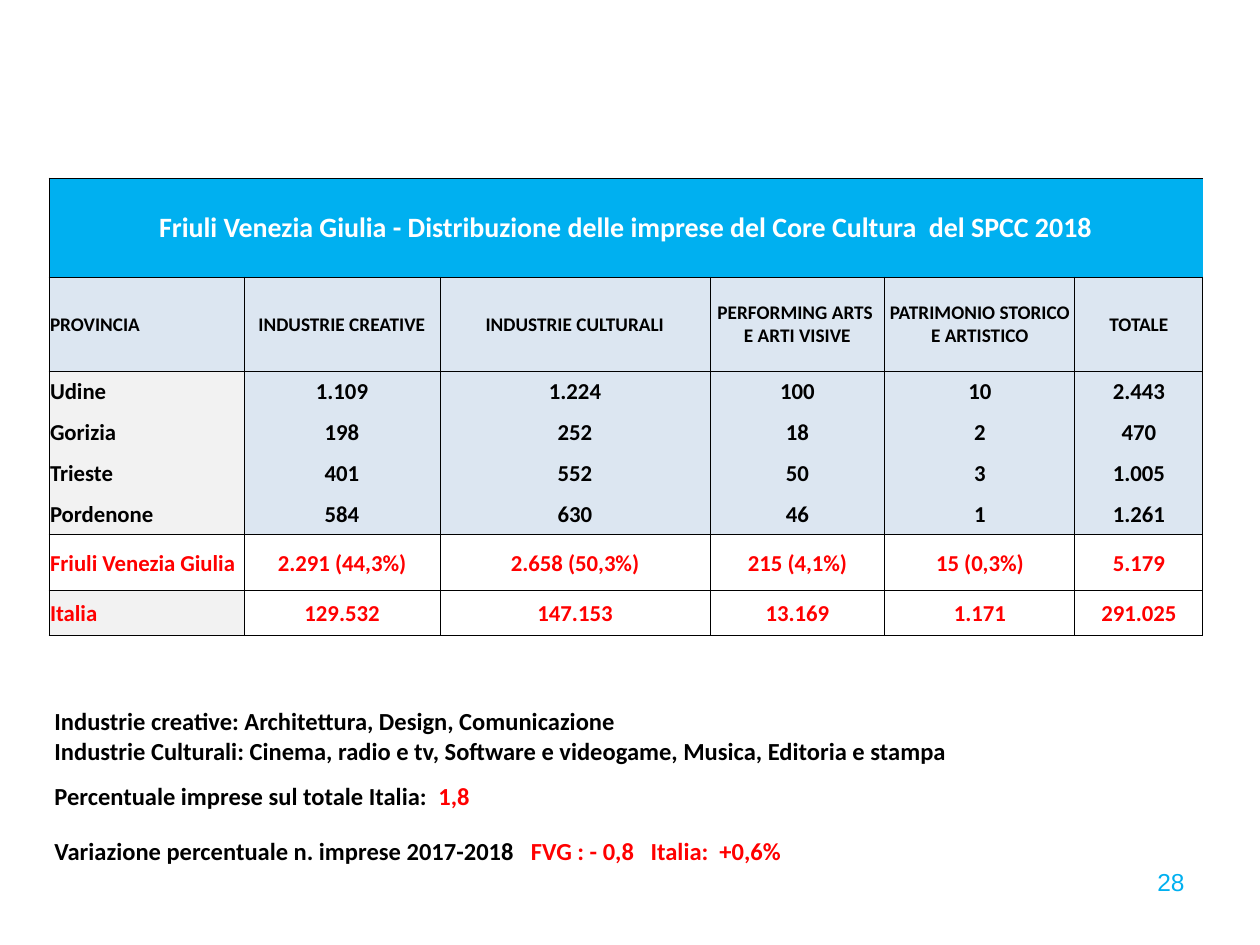
from lxml import etree
from pptx import Presentation
from pptx import util as u
from pptx.dml.color import RGBColor
from pptx.enum import text
from pptx.oxml.ns import qn

PX = 914400 / 126  # EMU in one px
BLACK = RGBColor(0x00, 0x00, 0x00)
WHITE = RGBColor(0xFF, 0xFF, 0xFF)
RED = RGBColor(0xFF, 0x00, 0x00)
SKY = RGBColor(0x00, 0xB0, 0xF0)
PALE_BLUE = RGBColor(0xDC, 0xE6, 0xF1)
PALE_GREY = RGBColor(0xF2, 0xF2, 0xF2)
LEFT, CENTER, RIGHT = text.PP_ALIGN.LEFT, text.PP_ALIGN.CENTER, text.PP_ALIGN.RIGHT

TITLE = "Friuli Venezia Giulia - Distribuzione delle imprese del Core Cultura  del SPCC 2018"
HEADER = ["PROVINCIA", "INDUSTRIE CREATIVE", "INDUSTRIE CULTURALI",
          "PERFORMING ARTS \nE ARTI VISIVE", "PATRIMONIO STORICO E ARTISTICO", "TOTALE"]
PROVINCES = [
    ["Udine", "1.109", "1.224", "100", "10", "2.443"],
    ["Gorizia", "198", "252", "18", "2", "470"],
    ["Trieste", "401", "552", "50", "3", "1.005"],
    ["Pordenone", "584", "630", "46", "1", "1.261"],
]
REGION = ["Friuli Venezia Giulia", "2.291 (44,3%)", "2.658 (50,3%)",
          "215 (4,1%)", "15 (0,3%)", "5.179"]
ITALY = ["Italia", "129.532", "147.153", "13.169", "1.171", "291.025"]
COLUMNS = [195, 196, 270, 175, 190, 128]
ROWS = [99, 94, 41, 41, 41, 41, 56, 45]


def px(n):
    return u.Emu(round(n * PX))


class Deck:
    """Style and current slide."""
    font = "Calibri"

    def __init__(self, width, height):
        self.prs = Presentation()
        self.prs.slide_width, self.prs.slide_height = px(width), px(height)
        self.s = self.prs.slides.add_slide(self.prs.slide_layouts[6])

    def style(self, p, size, color=None, align=LEFT, bold=True, font=None):
        p.alignment = align
        f = p.font
        f.name, f.size, f.bold = font or self.font, u.Pt(size), bold
        if color is not None:
            f.color.rgb = color

    def text(self, x, y, w, h, lines, wrap=True, **look):
        """Each line is a list of (words, colour) runs."""
        tf = self.s.shapes.add_textbox(px(x), px(y), px(w), px(h)).text_frame
        tf.word_wrap = wrap
        for i, line in enumerate(lines):
            p = tf.add_paragraph() if i else tf.paragraphs[0]
            self.style(p, 14, **look)
            for words, color in line:
                r = p.add_run()
                r.text = words
                r.font.color.rgb = color

    def table(self, x, y, columns, rows):
        t = self.s.shapes.add_table(len(rows), len(columns), px(x), px(y),
                                    px(sum(columns)), px(sum(rows))).table
        t.first_row = t.horz_banding = False
        for col, w in zip(t.columns, columns):
            col.width = px(w)
        for row, h in zip(t.rows, rows):
            row.height = px(h)
        return t

    def row(self, cells, words, size, color, fills, edges="LRTB"):
        """Fills are those of the first cell and of the others."""
        for i, (cell, word) in enumerate(zip(cells, words)):
            cell.text = word
            cell.vertical_anchor = text.MSO_ANCHOR.MIDDLE
            cell.margin_left = cell.margin_right = cell.margin_top = px(1)
            cell.margin_bottom = 0
            for p in cell.text_frame.paragraphs:
                self.style(p, size, color, CENTER if i else LEFT)
            fill = fills[min(i, 1)]
            if fill is None:
                cell.fill.background()
            else:
                cell.fill.solid()
                cell.fill.fore_color.rgb = fill
            self.borders(cell, edges)

    def borders(self, cell, edges):
        tcPr = cell._tc.get_or_add_tcPr()
        for i, edge in enumerate("LRTB"):
            ln = etree.Element(qn("a:ln" + edge), w=str(u.Pt(0.5)))
            if edge in edges:
                paint = etree.SubElement(ln, qn("a:solidFill"))
                etree.SubElement(paint, qn("a:srgbClr"), val=str(BLACK))
            else:
                etree.SubElement(ln, qn("a:noFill"))
            tcPr.insert(i, ln)


def main():
    d = Deck(1260, 945)

    # Slide number
    d.text(903, 861, 294, 66, [[("28", SKY)]], align=RIGHT, bold=False, font="Arial")

    # Table: title band, header, provinces, totals
    t = d.table(49, 178, COLUMNS, ROWS)
    band, header, *provinces, region, italy = [list(row.cells) for row in t.rows]
    d.row(band[:1], [TITLE], 16, WHITE, [SKY], "LTB")
    d.style(band[0].text_frame.paragraphs[0], 16, WHITE, CENTER)
    for cell in band[1:]:
        d.borders(cell, "TB")
    band[0].merge(band[-1])
    d.row(header, HEADER, 11, BLACK, [PALE_BLUE, PALE_BLUE])
    for i, (cells, words) in enumerate(zip(provinces, PROVINCES)):
        edges = "LR" + {0: "T", len(PROVINCES) - 1: "B"}.get(i, "")
        d.row(cells, words, 13, BLACK, [PALE_GREY, PALE_BLUE], edges)
    d.row(region, REGION, 13, RED, [None, None])
    d.row(italy, ITALY, 13, RED, [PALE_GREY, WHITE])

    # Notes under the table
    d.text(42, 700, 1139, 72, [
        [("Industrie creative: Architettura, Design, Comunicazione", BLACK)],
        [("Industrie Culturali: Cinema, radio e tv, Software e videogame, "
          "Musica, Editoria e stampa", BLACK)]])
    d.text(42, 775, 444, 43, [[("Percentuale imprese sul totale Italia:  ", BLACK),
                               ("1,8", RED)]], wrap=False)
    d.text(42, 830, 824, 43, [[("Variazione percentuale n. imprese 2017-2018   ", BLACK),
                               ("FVG : - 0,8   Italia:  +0,6%", RED)]])

    d.prs.save("out.pptx")


if __name__ == "__main__":
    main()
